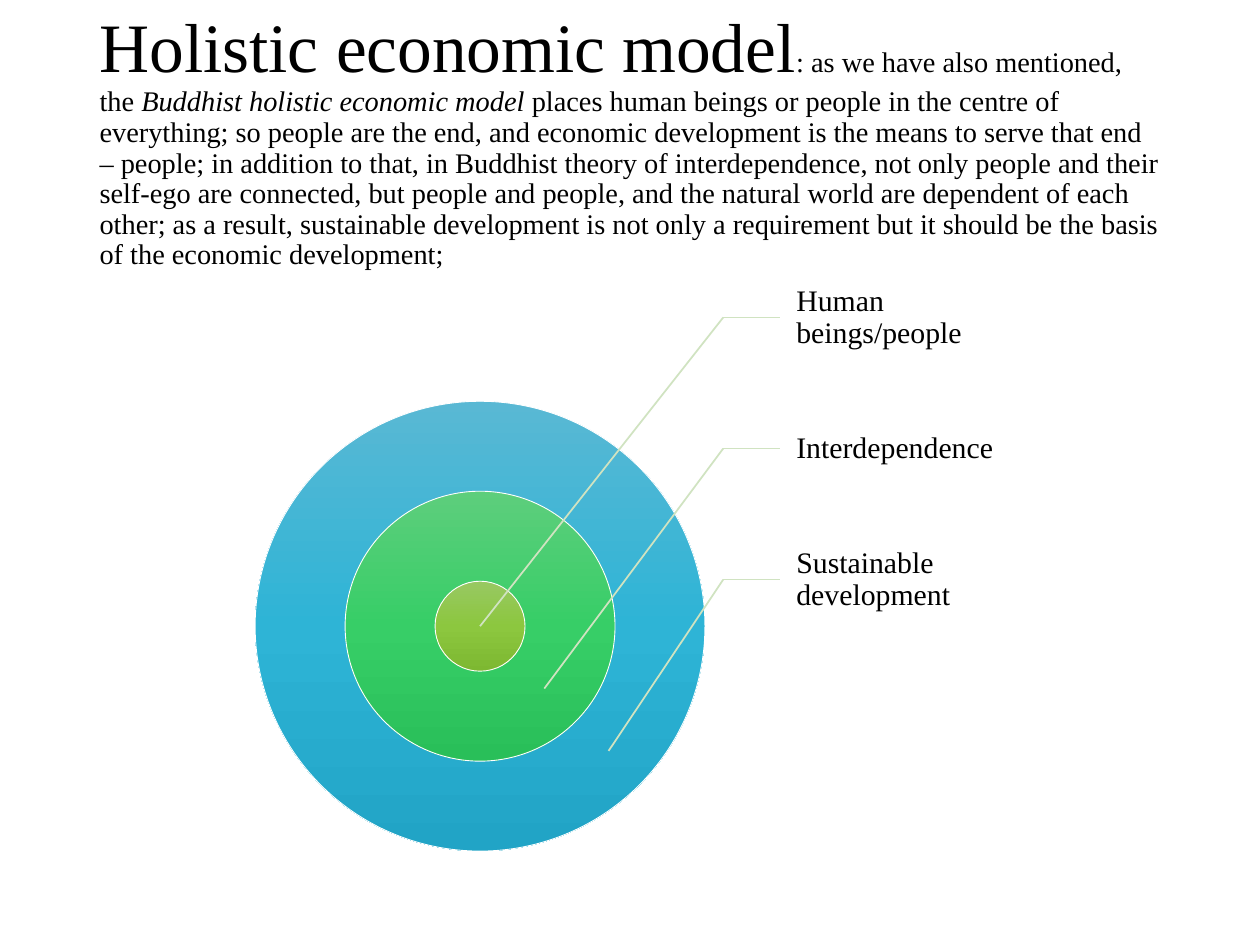
from copy import deepcopy

from pptx import Presentation, util as u
from pptx.dml.color import RGBColor
from pptx.enum import shapes, text
from pptx.oxml.ns import qn
from lxml import etree

# Content
TITLE = [
    ("Holistic economic model", 39.6, False),
    (": as we have also mentioned, the ", 16.2, False),
    ("Buddhist holistic economic model ", 16.2, True),
    ("places human beings or people in the centre of everything; so people are "
     "the end, and economic development is the means to serve that end – people; "
     "in addition to that, in Buddhist theory of interdependence, not only people "
     "and their self-ego are connected, but people and people, and the natural "
     "world are dependent of each other; as a result, sustainable development is "
     "not only a requirement but it should be the basis of the economic "
     "development;", 16.2, False),
]
LABELS = ["Human beings/people", "Interdependence", "Sustainable development"]
COLORS = {
    "text": "000000", "rim": "FFFFFF", "leader": "D0E3C1",
    "outer": ("59B8D4", "2EB4D6", "21A4C6"),
    "middle": ("5DCE7C", "37CE67", "29BF59"),
    "inner": ("98C862", "8CC73F", "7DB831"),
}
RINGS = [("outer", 5), ("middle", 3), ("inner", 1)]  # diameter in ring units
FONT = "Times New Roman"

# Layout in inches
CX, CY, UNIT = 3.81, 4.97, 0.714
LABEL_X, LABEL_Y, LABEL_W, LABEL_H = 6.19, 2, 1.78, 1.04
ELBOW_X = 5.74
STEP_X, STEP_Y = 0.51, 0.495  # shift of each leader's tip


def box(*lengths):
    return [u.Inches(v) for v in lengths]


def rgb(value):
    return RGBColor.from_string(value)


def add_run(p, content, size, italic=False):
    r = p.add_run()
    r.text = content
    for name, value in {"name": FONT, "size": u.Pt(size), "italic": italic}.items():
        setattr(r.font, name, value)
    r.font.color.rgb = rgb(COLORS["text"])


def set_frame(tf, insets):
    sides = ("margin_left", "margin_top", "margin_right", "margin_bottom")
    form = dict(zip(sides, box(*insets)), word_wrap=True,
                auto_size=text.MSO_AUTO_SIZE.NONE,
                vertical_anchor=text.MSO_ANCHOR.MIDDLE)
    for name, value in form.items():
        setattr(tf, name, value)
    p = tf.paragraphs[0]
    p.alignment, p.line_spacing = text.PP_ALIGN.LEFT, 0.9
    return p


def add_ring(sl, name, units):
    d = units * UNIT
    sp = sl.shapes.add_shape(shapes.MSO_SHAPE.OVAL,
                             *box(CX - d / 2, CY - d / 2, d, d))
    sp.shadow.inherit = False
    sp.fill.gradient()
    sp.fill.gradient_angle = 270  # top to bottom
    stops = sp.fill._fill._gradFill.find(qn("a:gsLst"))
    stops.insert(1, deepcopy(stops[0]))
    for i, stop in enumerate(sp.fill.gradient_stops):
        stop.position = i / 2
        stop.color.rgb = rgb(COLORS[name][i])
    sp.line.color.rgb, sp.line.width = rgb(COLORS["rim"]), u.Pt(0.5)


def add_leader(sl, start, end):
    cn = sl.shapes.add_connector(shapes.MSO_CONNECTOR.STRAIGHT, *box(*start, *end))
    cn.line.color.rgb, cn.line.width = rgb(COLORS["leader"]), u.Pt(1)
    etree.SubElement(cn._element.spPr, qn("a:effectLst"))
    return cn


def main():
    prs = Presentation()
    prs.slide_width, prs.slide_height = box(10, 7.5)
    sl = prs.slides.add_slide(prs.slide_layouts[5])

    # Title with running text
    title = sl.shapes.title
    title.left, title.top, title.width, title.height = box(0.69, 0.4, 8.62, 1.45)
    p = set_frame(title.text_frame, (0.1, 0.05, 0.1, 0.05))
    for part in TITLE:
        add_run(p, *part)

    # Concentric rings
    for name, units in RINGS:
        add_ring(sl, name, units)

    # Labels with bent leaders
    for i, label in enumerate(LABELS):
        top = LABEL_Y + i * LABEL_H
        mid = top + LABEL_H / 2
        tb = sl.shapes.add_textbox(*box(LABEL_X, top, LABEL_W, LABEL_H))
        add_run(set_frame(tb.text_frame, (0.13, 0.02, 0.02, 0.02)), label, 17)
        elbow = (ELBOW_X, mid)
        add_leader(sl, elbow, (LABEL_X, mid)).end_connect(tb, 1)
        add_leader(sl, elbow, (CX + i * STEP_X, CY + i * STEP_Y))

    prs.save("out.pptx")


if __name__ == "__main__":
    main()
